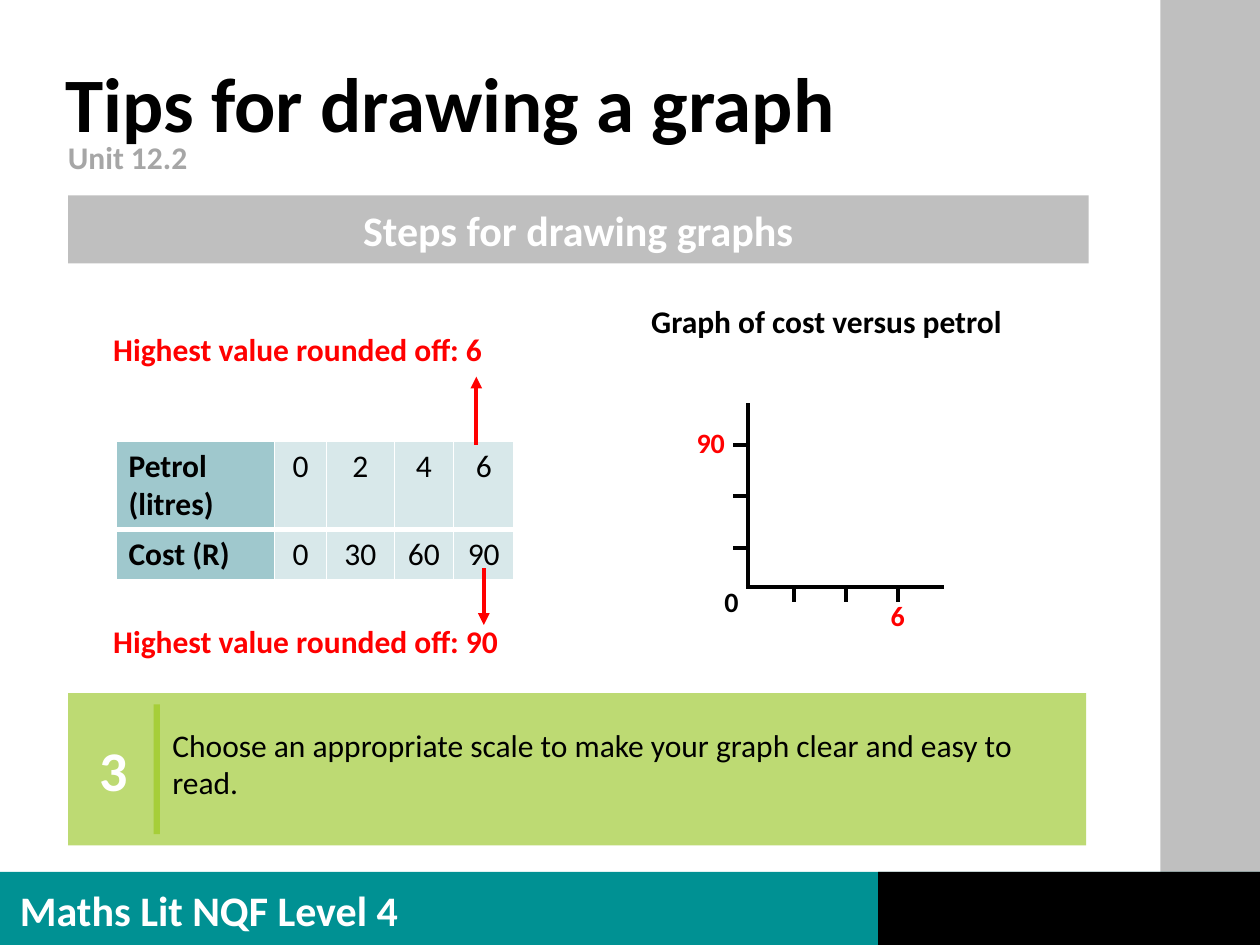
from dataclasses import dataclass

from lxml.etree import SubElement
from pptx import Presentation
from pptx.dml.color import RGBColor
from pptx.enum.shapes import MSO_CONNECTOR as Connector, MSO_SHAPE as Shape
from pptx.enum.text import MSO_ANCHOR as Anchor, PP_ALIGN as Align
from pptx.oxml import parse_xml
from pptx.oxml.ns import nsdecls, qn
from pptx.util import Inches, Pt


@dataclass(frozen=True)
class Theme:
    font: str = "Calibri"
    black: str = "000000"
    white: str = "FFFFFF"
    red: str = "FF0000"
    grey: str = "BFBFBF"
    muted: str = "A6A6A6"
    teal: str = "009193"
    lime: str = "BDDA73"
    lime_dark: str = "A6CE39"
    header_cell: str = "9FC8CD"
    value_cell: str = "D8E8EA"
    title: int = 44
    number: int = 32
    heading: int = 24
    body: int = 18
    axis: int = 16
    stroke: float = 2.25


class SlideBuilder:
    """Places elements on a grid of 10 columns by 7.5 rows."""

    COLS, ROWS = 10, 7.5

    def __init__(self, prs, theme):
        self.theme = theme
        self.col = prs.slide_width / self.COLS
        self.row = prs.slide_height / self.ROWS
        self.slide = prs.slides.add_slide(prs.slide_layouts[6])
        self.shapes = self.slide.shapes

    def place(self, *lengths):
        """Turn alternating columns and rows into slide lengths."""
        return [round(n * (self.row if i % 2 else self.col))
                for i, n in enumerate(lengths)]

    def style(self, paragraph, size, color, bold=True, align=Align.LEFT):
        paragraph.alignment = align
        font = paragraph.font
        font.name, font.size, font.bold = self.theme.font, Pt(size), bold
        font.color.rgb = RGBColor.from_string(color)

    def block(self, box, color):
        block = self.shapes.add_shape(Shape.RECTANGLE, *self.place(*box))
        block.shadow.inherit = False
        block.fill.solid()
        block.fill.fore_color.rgb = RGBColor.from_string(color)
        block.line.fill.background()
        return block

    def banner(self, box, color, words, size, text_color):
        frame = self.block(box, color).text_frame
        frame.vertical_anchor = Anchor.MIDDLE
        frame.text = words
        self.style(frame.paragraphs[0], size, text_color, align=Align.CENTER)

    def text(self, box, words, size, color, bold=True, align=Align.LEFT,
             wrap=True, anchor=Anchor.TOP, spacing=None):
        frame = self.shapes.add_textbox(*self.place(*box)).text_frame
        frame.word_wrap = wrap
        frame.vertical_anchor = anchor
        frame.text = words
        paragraph = frame.paragraphs[0]
        paragraph.line_spacing = spacing
        self.style(paragraph, size, color, bold, align)

    def line(self, start, end, color, arrow=False):
        line = self.shapes.add_connector(
            Connector.STRAIGHT, *self.place(*start, *end))
        line.line.width = Pt(self.theme.stroke)
        line.line.color.rgb = RGBColor.from_string(color)
        properties = line._element.spPr
        if arrow:
            SubElement(properties.find(qn("a:ln")), qn("a:tailEnd"),
                       type="triangle")
        SubElement(properties, qn("a:effectLst"))

    def border(self, cell, widths):
        """Draw white cell edges, widths given left, right, top, bottom."""
        properties = cell._tc.get_or_add_tcPr()
        for i, (side, width) in enumerate(zip("LRTB", widths)):
            properties.insert(i, parse_xml(
                f'<a:ln{side} {nsdecls("a")} w="{Pt(width)}"><a:solidFill>'
                f'<a:srgbClr val="{self.theme.white}"/></a:solidFill>'
                f'</a:ln{side}>'))

    def table(self, corner, widths, heights, rows):
        box = self.place(*corner, sum(widths), sum(heights))
        table = self.shapes.add_table(len(rows), len(widths), *box).table
        table.first_row = table.horz_banding = False
        for column, width in zip(table.columns, widths):
            column.width = round(width * self.col)
        for r, (height, values) in enumerate(zip(heights, rows)):
            table.rows[r].height = round(height * self.row)
            for c, value in enumerate(values):
                cell, header = table.cell(r, c), c == 0
                cell.text = value
                self.style(cell.text_frame.paragraphs[0], self.theme.body,
                           self.theme.black, header,
                           Align.LEFT if header else Align.CENTER)
                cell.fill.solid()
                cell.fill.fore_color.rgb = RGBColor.from_string(
                    self.theme.header_cell if header else self.theme.value_cell)
                self.border(cell, (1, 1, 1, 3) if r == 0 else (1, 1, 3, 1))


def main():
    prs = Presentation()
    prs.slide_width, prs.slide_height = Inches(10), Inches(7.5)
    t = Theme()
    page = SlideBuilder(prs, t)

    # Side strip and footer
    page.block((9.21, 0, 0.79, 7.5), t.grey)
    page.block((0, 6.92, 10, 0.58), t.teal)
    page.block((6.97, 6.92, 3.03, 0.58), t.black)
    page.text((0.06, 6.97, 3.75, 0.5), "Maths Lit NQF Level 4",
              t.heading, t.white)

    # Title and unit
    page.text((0.42, 0.46, 8.65, 0.79), "Tips for drawing a graph",
              t.title, t.black, anchor=Anchor.MIDDLE, spacing=0.9)
    page.text((0.44, 1.08, 8.65, 0.33), "Unit 12.2",
              t.body, t.muted, spacing=0.9)

    # Step panel and section banner
    page.block((0.54, 5.5, 8.08, 1.21), t.lime)
    page.text((0.57, 5.79, 0.67, 0.64), "3", t.number, t.white,
              align=Align.CENTER)
    page.text((1.27, 5.71, 7.03, 0.71),
              "Choose an appropriate scale to make your graph clear and "
              "easy to read.", t.body, t.black, bold=False)
    page.block((1.22, 5.59, 0.05, 1.03), t.lime_dark)
    page.banner((0.54, 1.55, 8.1, 0.54), t.grey, "Steps for drawing graphs",
                t.heading, t.white)

    # Table of values with its highest values
    page.table((0.92, 3.5), (1.26, 0.41, 0.54, 0.47, 0.48), (0.7, 0.4),
               [("Petrol (litres)", "0", "2", "4", "6"),
                ("Cost (R)", "0", "30", "60", "90")])
    page.line((3.84, 4.51), (3.84, 4.96), t.red, arrow=True)
    page.line((3.78, 3.53), (3.78, 2.99), t.red, arrow=True)
    for top, highest in ((2.57, 6), (4.89, 90)):
        page.text((0.8, top, 3.29, 0.4), f"Highest value rounded off: {highest}",
                  t.body, t.red, wrap=False)

    # Graph axes, ticks and scale labels
    page.text((5.07, 2.35, 3.01, 0.4), "Graph of cost versus petrol",
              t.body, t.black, wrap=False)
    origin_x, origin_y, tick = 5.94, 4.66, 0.12
    page.line((origin_x, 3.2), (origin_x, origin_y), t.black)
    page.line((origin_x - 0.02, origin_y), (7.49, origin_y), t.black)
    for step in range(3):
        x, y = 6.3 + 0.415 * step, 4.35 - 0.41 * step
        page.line((x, origin_y), (x, origin_y + tick), t.black)
        page.line((origin_x - tick, y), (origin_x, y), t.black)
    for label, left, top, width, color in (
            ("6", 6.97, 4.7, 0.32, t.red),
            ("90", 5.43, 3.33, 0.43, t.red),
            ("0", 5.65, 4.59, 0.32, t.black)):
        page.text((left, top, width, 0.37), label, t.axis, color, wrap=False)

    prs.save("out.pptx")


if __name__ == "__main__":
    main()
